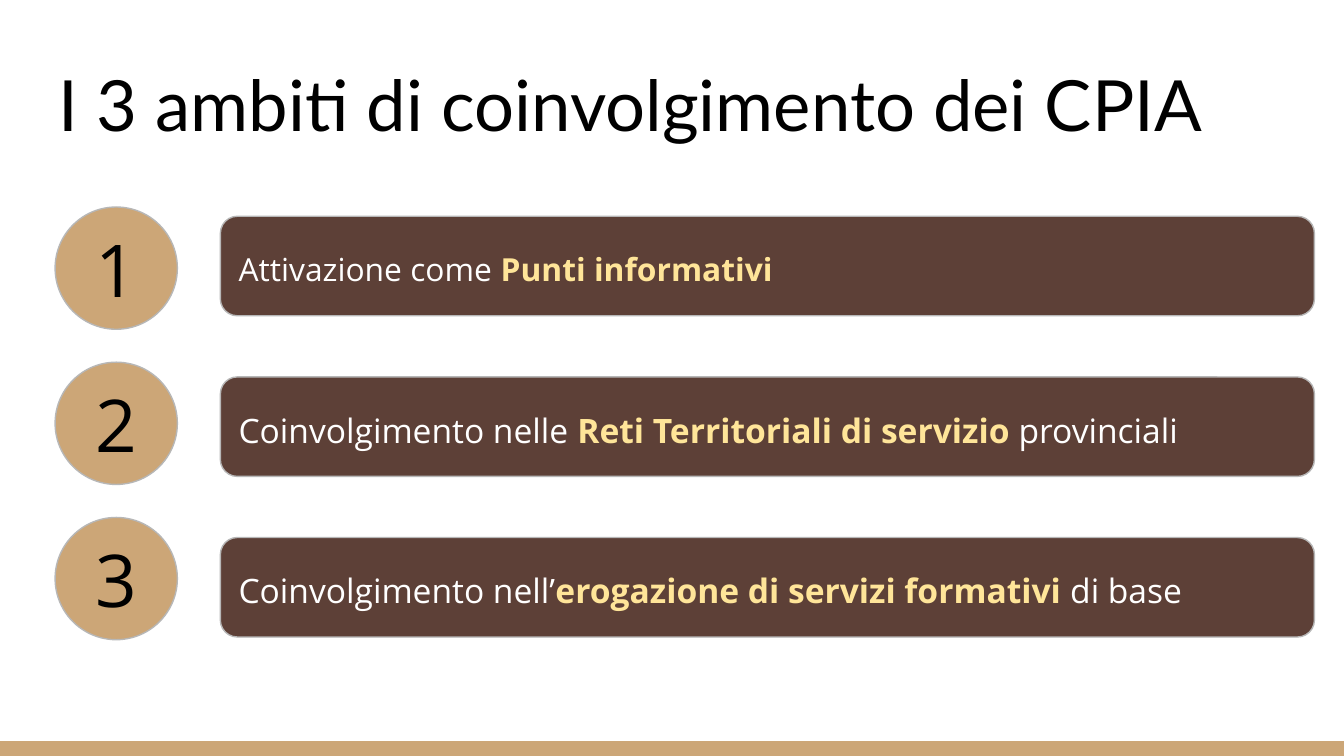
from pptx import Presentation
from pptx.dml.color import RGBColor
from pptx.enum.shapes import MSO_SHAPE
from pptx.enum.text import MSO_ANCHOR, PP_ALIGN
from pptx.util import Inches, Pt

RECT, OVAL, ROUND = MSO_SHAPE.RECTANGLE, MSO_SHAPE.OVAL, MSO_SHAPE.ROUNDED_RECTANGLE
TOP, MIDDLE = MSO_ANCHOR.TOP, MSO_ANCHOR.MIDDLE
LEFT, CENTER = PP_ALIGN.LEFT, PP_ALIGN.CENTER

TAN = RGBColor(0xCC, 0xA6, 0x77)
BROWN = RGBColor(0x5D, 0x40, 0x37)
GRAY = RGBColor(0xB7, 0xB7, 0xB7)
CREAM = RGBColor(0xFF, 0xE5, 0x99)
WHITE = RGBColor(0xFF, 0xFF, 0xFF)
BLACK = RGBColor(0, 0, 0)

WIDTH = 10
HEIGHT = WIDTH * 9 / 16
BAND = 0.11                 # height of the footer band
DISC, BAR = 0.91, 0.74      # heights of the number discs and the bars
BAR_LEFT = 1.23             # from the left edge of the list
BAR_DROP = 0.07             # first bar below first disc
BAR_RISE = 0.02             # last bar above the foot of the list

# Size, then plain, bold and closing plain text
ITEMS = [
    (17, "Attivazione come ", "Punti informativi", ""),
    (18, "Coinvolgimento nelle ", "Reti Territoriali di servizio", " provinciali"),
    (18, "Coinvolgimento nell’", "erogazione di servizi formativi", " di base"),
]


def add_form(slide, kind, box, fill, line=None):
    form = slide.shapes.add_shape(kind, *map(Inches, box))
    form.shadow.inherit = False
    form.fill.solid()
    form.fill.fore_color.rgb = fill
    if line is None:
        form.line.fill.background()
    else:
        form.line.color.rgb = line
        form.line.width = Pt(0.75)
    return form


def set_text(form, runs, face, size, anchor=MIDDLE, align=LEFT):
    """Write (text, colour, bold) runs as one paragraph."""
    frame = form.text_frame
    frame.word_wrap = True
    frame.vertical_anchor = anchor
    frame.margin_left = frame.margin_right = Inches(0.1)
    frame.margin_top = frame.margin_bottom = Inches(0.1)
    para = frame.paragraphs[0]
    para.alignment = align
    para.font.name, para.font.size = face, Pt(size)
    for text, color, bold in runs:
        run = para.add_run()
        run.text = text
        run.font.color.rgb = color
        run.font.bold = bold
    return para


def add_title(slide, box):
    form = slide.shapes.add_textbox(*map(Inches, box))
    set_text(form, [("I 3 ambiti di coinvolgimento dei CPIA", BLACK, False)],
             "Lato", 37.8, TOP)


def add_list(slide, box):
    left, top, width, height = box
    gaps = len(ITEMS) - 1
    disc_step = (height - DISC) / gaps
    bar_step = (height - BAR_DROP - BAR_RISE - BAR) / gaps
    for row, (size, start, strong, end) in enumerate(ITEMS):
        # Number disc
        disc = add_form(slide, OVAL, (left, top + row * disc_step, DISC, DISC), TAN, GRAY)
        set_text(disc, [(str(row + 1), BLACK, False)], "Open Sans", 39, align=CENTER)

        # Text bar
        bar = add_form(slide, ROUND, (left + BAR_LEFT, top + BAR_DROP + row * bar_step,
                                      width - BAR_LEFT, BAR), BROWN, GRAY)
        bar.adjustments[0] = 0.17
        runs = [(start, WHITE, False), (strong, CREAM, True), (end, WHITE, False)]
        para = set_text(bar, [run for run in runs if run[0]], "Open Sans", size)
        para.line_spacing = 1.15


def main():
    deck = Presentation()
    deck.slide_width, deck.slide_height = Inches(WIDTH), Inches(HEIGHT)
    slide = deck.slides.add_slide(deck.slide_layouts[6])

    add_form(slide, RECT, (0, HEIGHT - BAND, WIDTH, BAND), TAN)  # footer band
    add_title(slide, (0.34, 0.35, 9.32, 0.91))
    add_list(slide, (0.41, 1.54, 9.37, 3.22))
    deck.save("out.pptx")


if __name__ == "__main__":
    main()
